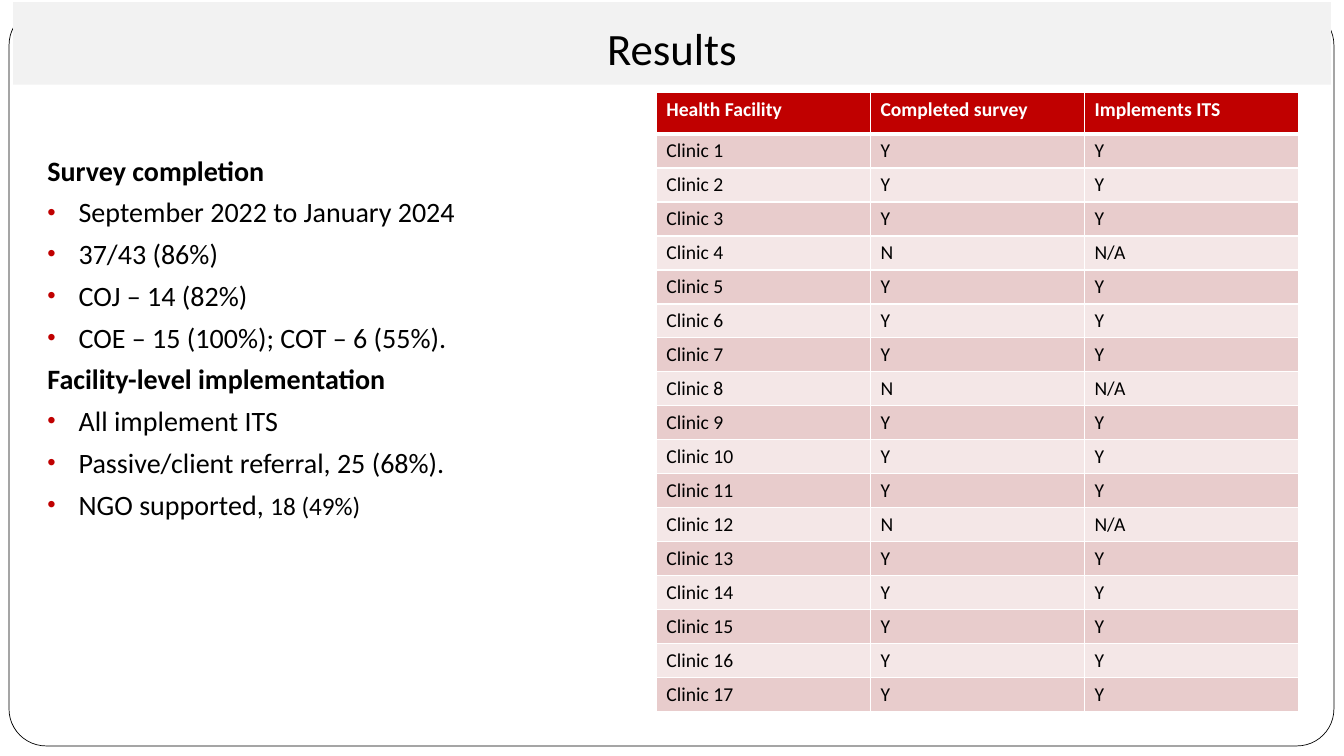
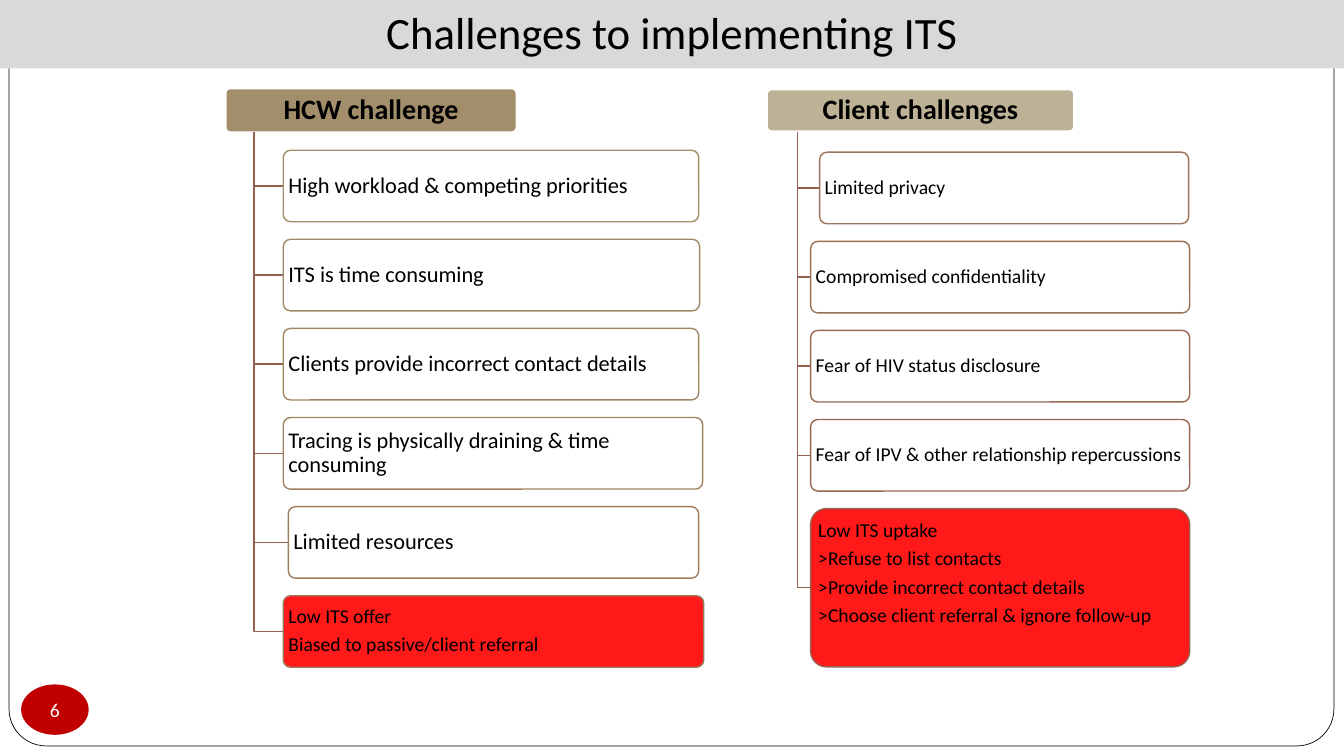
import pptx
import pptx.dml.color
import pptx.enum.shapes
import pptx.enum.text
import pptx.oxml.ns
import pptx.util
from lxml import etree

Inches = pptx.util.Inches
Pt = pptx.util.Pt
RGBColor = pptx.dml.color.RGBColor
SHAPE = pptx.enum.shapes.MSO_SHAPE
ALIGN = pptx.enum.text.PP_ALIGN
ANCHOR = pptx.enum.text.MSO_ANCHOR
qn = pptx.oxml.ns.qn

FONT = "Calibri"
BLACK = RGBColor(0x00, 0x00, 0x00)
WHITE = RGBColor(0xFF, 0xFF, 0xFF)
CRIMSON = RGBColor(0xC0, 0x00, 0x00)
RED = RGBColor(0xFF, 0x00, 0x00)
LIGHT_GREY = RGBColor(0xF2, 0xF2, 0xF2)
MID_GREY = RGBColor(0xD9, 0xD9, 0xD9)
DARK_BAND = RGBColor(0xE8, 0xCC, 0xCC)
LIGHT_BAND = RGBColor(0xF4, 0xE7, 0xE7)
TAN = RGBColor(0xA2, 0x8E, 0x6A)
LIGHT_TAN = RGBColor(0xBD, 0xB1, 0x96)
BROWN = RGBColor(0x95, 0x62, 0x51)


def write(paragraph, text, size=14, bold=False, color=BLACK, align=None):
    """Append a formatted run to the paragraph."""
    if align is not None:
        paragraph.alignment = align
    run = paragraph.add_run()
    run.text = text
    run.font.name = FONT
    run.font.size = Pt(size)
    run.font.bold = bold
    run.font.color.rgb = color


def add_box(slide, kind, bounds, fill, line=None, line_width=1, margins=(0.03, 0.02, 0.03, 0.02)):
    """Add a filled shape with middle-anchored text; bounds and margins in inches."""
    shape = slide.shapes.add_shape(kind, *[Inches(value) for value in bounds])
    shape.shadow.inherit = False
    shape.fill.solid()
    shape.fill.fore_color.rgb = fill
    if line is None:
        shape.line.fill.background()
    else:
        shape.line.color.rgb = line
        shape.line.width = Pt(line_width)
    frame = shape.text_frame
    frame.word_wrap = True
    frame.vertical_anchor = ANCHOR.MIDDLE
    frame.margin_left, frame.margin_top, frame.margin_right, frame.margin_bottom = [
        Inches(value) for value in margins]
    return shape


presentation = pptx.Presentation()
presentation.slide_width = Inches(13.33)
presentation.slide_height = Inches(7.5)

# Slides with their title bands
title_bands = [
    (1, "Results", (0.13, 0.02, 13.07, 0.82), LIGHT_GREY),
    (5, "Challenges to implementing ITS", (0, 0, 13.33, 0.68), MID_GREY),
]
for layout_index, title_text, bounds, fill in title_bands:
    slide = presentation.slides.add_slide(presentation.slide_layouts[layout_index])
    title = slide.shapes.title
    title.left, title.top, title.width, title.height = [Inches(value) for value in bounds]
    title.fill.solid()
    title.fill.fore_color.rgb = fill
    frame = title.text_frame
    frame.auto_size = pptx.enum.text.MSO_AUTO_SIZE.NONE
    frame.vertical_anchor = ANCHOR.BOTTOM
    frame.margin_bottom = Inches(0.1)
    write(frame.paragraphs[0], title_text, size=32, align=ALIGN.CENTER)
results, challenges = presentation.slides

# Rounded page frame, moved to the master so that all slides share it
page_frame = add_box(results, SHAPE.ROUNDED_RECTANGLE, (0.09, 0.08, 13.14, 7.32), WHITE, BLACK, 0.5)
page_frame.adjustments[0] = 0.05
page_frame.element.nvSpPr.cNvPr.set("id", "20")
presentation.slide_master.shapes.element.insert(2, page_frame.element)

# Results: list of findings
findings = [
    ("Survey completion", [
        "September 2022 to January 2024", "37/43 (86%)", "COJ – 14 (82%)",
        "COE – 15 (100%); COT – 6 (55%)."]),
    ("Facility-level implementation", [
        "All implement ITS", "Passive/client referral, 25 (68%).", "NGO supported, "]),
]
body = results.placeholders[1]
body.left, body.top, body.width, body.height = Inches(0.37), Inches(1.47), Inches(5.43), Inches(4.02)
body.fill.solid()
body.fill.fore_color.rgb = WHITE
body.text_frame.auto_size = pptx.enum.text.MSO_AUTO_SIZE.NONE
paragraph = None
for heading, points in findings:
    for text in [heading] + points:
        is_heading = text == heading
        first = paragraph is None
        paragraph = body.text_frame.paragraphs[0] if first else body.text_frame.add_paragraph()
        paragraph.space_before = Pt(0 if first else 5.8)
        indent = 0 if is_heading else Inches(0.31)
        properties = paragraph._p.get_or_add_pPr()
        properties.set("marL", str(indent))
        properties.set("indent", str(-indent))
        if is_heading:
            etree.SubElement(properties, qn("a:buNone"))
        else:
            bullet_color = etree.SubElement(properties, qn("a:buClr"))
            etree.SubElement(bullet_color, qn("a:srgbClr"), val=str(CRIMSON))
            etree.SubElement(properties, qn("a:buSzPct"), val="85000")
            etree.SubElement(properties, qn("a:buFont"), typeface="Arial")
            etree.SubElement(properties, qn("a:buChar"), char="•")
        write(paragraph, text, size=20, bold=is_heading)
write(paragraph, "18 (49%)", size=18)

# Results: clinic table
not_completed = {4, 8, 12}
rows = [("Health Facility", "Completed survey", "Implements ITS")]
for number in range(1, 18):
    answers = ("N", "N/A") if number in not_completed else ("Y", "Y")
    rows.append((f"Clinic {number}",) + answers)
header_height, table_height = 0.41, 6.14
table = results.shapes.add_table(
    len(rows), 3, Inches(6.51), Inches(0.92), Inches(6.37), Inches(table_height)).table
table.horz_banding = False
for column in table.columns:
    column.width = Inches(6.37 / 3)
for row_index, row in enumerate(rows):
    is_header = row_index == 0
    table.rows[row_index].height = Inches(
        header_height if is_header else (table_height - header_height) / (len(rows) - 1))
    band = CRIMSON if is_header else DARK_BAND if row_index % 2 else LIGHT_BAND
    for column_index, text in enumerate(row):
        cell = table.cell(row_index, column_index)
        cell.fill.solid()
        cell.fill.fore_color.rgb = band
        write(cell.text_frame.paragraphs[0], text, bold=is_header, color=WHITE if is_header else BLACK)
        thick_side = {0: "lnB", 1: "lnT"}.get(row_index)
        for position, side in enumerate(("lnL", "lnR", "lnT", "lnB")):
            border = etree.Element(qn("a:" + side), w=str(Pt(3 if side == thick_side else 1)))
            border_fill = etree.SubElement(border, qn("a:solidFill"))
            etree.SubElement(border_fill, qn("a:srgbClr"), val=str(WHITE))
            cell._tc.get_or_add_tcPr().insert(position, border)

# Challenges: each column has a header, and boxes hung from it by elbows
# Box: left, width, outline, lines of text
box_height, box_pitch = 0.71, 4.42 / 5
columns = [
    {"header": "HCW challenge", "bounds": (2.24, 0.88, 2.88, 0.43), "fill": TAN,
     "trunk": 2.52, "top": 1.49, "size": 16, "last_height": box_height, "last_margin": 0.02,
     "boxes": [
         (2.81, 4.12, "A28E6A", ["High workload & competing priorities"]),
         (2.81, 4.13, "A18A67", ["ITS is time consuming"]),
         (2.81, 4.12, "A18664", ["Clients provide incorrect contact details"]),
         (2.81, 4.16, "A08261", ["Tracing is physically draining & time consuming"]),
         (2.86, 4.07, "9F7D5E", ["Limited resources"]),
         (2.81, 4.17, "9D795C", ["Low ITS offer", "Biased to passive/client referral"]),
     ]},
    {"header": "Client challenges", "bounds": (7.61, 0.89, 3.04, 0.41), "fill": LIGHT_TAN,
     "trunk": 7.91, "top": 1.51, "size": 14, "last_height": 1.57, "last_margin": 0.3,
     "boxes": [
         (8.13, 3.66, "9C745A", ["Limited privacy"]),
         (8.04, 3.76, "9A7057", ["Compromised confidentiality"]),
         (8.04, 3.76, "986B55", ["Fear of HIV status disclosure"]),
         (8.04, 3.76, "976753", ["Fear of IPV & other relationship repercussions"]),
         (8.04, 3.76, "956251", ["Low ITS uptake", ">Refuse to list contacts",
                                 ">Provide incorrect contact details",
                                 ">Choose client referral & ignore follow-up"]),
     ]},
]
for column in columns:
    header = add_box(challenges, SHAPE.ROUNDED_RECTANGLE, column["bounds"], column["fill"], WHITE)
    header.adjustments[0] = 0.1
    paragraph = header.text_frame.paragraphs[0]
    paragraph.line_spacing = 0.9
    write(paragraph, column["header"], size=20, bold=True, align=ALIGN.CENTER)

    trunk_left, trunk_top = Inches(column["trunk"]), Inches(1.31)
    for index, (left, width, outline, lines) in enumerate(column["boxes"]):
        is_last = index == len(column["boxes"]) - 1
        top = column["top"] + index * box_pitch
        height = column["last_height"] if is_last else box_height
        bottom_margin = column["last_margin"] if is_last else 0.02

        middle = Inches(top + height / 2)
        builder = challenges.shapes.build_freeform(trunk_left, trunk_top)
        builder.add_line_segments([(trunk_left, middle), (Inches(left), middle)], close=False)
        elbow = builder.convert_to_shape()
        elbow.shadow.inherit = False
        elbow.fill.background()
        elbow.line.color.rgb = BROWN
        elbow.line.width = Pt(1)

        box = add_box(challenges, SHAPE.ROUNDED_RECTANGLE, (left, top, width, height),
                      RED if is_last else WHITE, RGBColor.from_string(outline),
                      margins=(0.03, 0.02, 0.03, bottom_margin))
        box.adjustments[0] = 0.1
        fill_color = box.element.spPr.find(qn("a:solidFill")).find(qn("a:srgbClr"))
        etree.SubElement(fill_color, qn("a:alpha"), val="90000")
        for line_index, text in enumerate(lines):
            frame = box.text_frame
            paragraph = frame.add_paragraph() if line_index else frame.paragraphs[0]
            paragraph.line_spacing = 0.9
            paragraph.space_before = Pt(5 if line_index else 0)
            write(paragraph, text, size=14 if is_last else column["size"], align=ALIGN.LEFT)

# Challenges: page number badge
badge = add_box(challenges, SHAPE.OVAL, (0.21, 6.79, 0.67, 0.5), CRIMSON, margins=(0, 0, 0, 0))
badge.text_frame.word_wrap = False
write(badge.text_frame.paragraphs[0], "6", color=WHITE, align=ALIGN.CENTER)

presentation.save("out.pptx")
